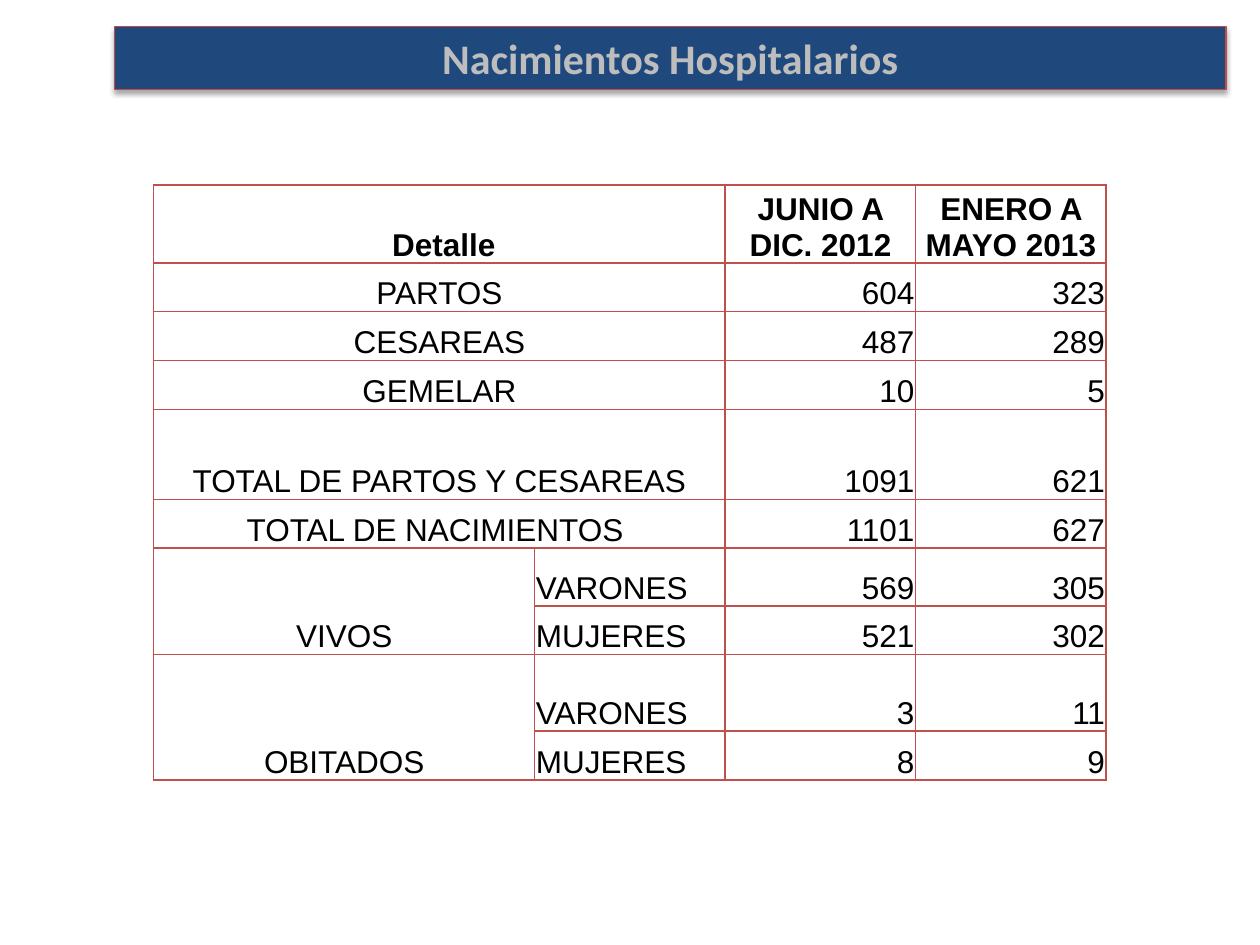
from dataclasses import dataclass

from lxml.etree import SubElement as Sub
from pptx import Presentation
from pptx.dml.color import RGBColor as Rgb
from pptx.enum.shapes import MSO_SHAPE as Shape
from pptx.enum.text import MSO_ANCHOR as Anchor, MSO_AUTO_SIZE as Auto, PP_ALIGN as Align
from pptx.oxml.ns import qn
from pptx.util import Inches, Pt


@dataclass(frozen=True)
class Theme:
    navy: str = "1F497D"
    red: str = "C0504D"
    edge: str = "BF4C48"
    grey: str = "BDBDBD"
    ink: str = "000000"
    head: str = "Calibri"
    body: str = "Arial"
    big: int = 24
    mid: int = 18


T = Theme()
WIDE, HIGH = 10, 7.5

# Column and row shares of the table
COLS = [2, 1, 1, 1]
ROWS = [62, 39, 39, 39, 72, 39, 46, 39, 61, 39]

# None marks a cell covered by a merge
DATA = [
    [" Detalle", None, "JUNIO A DIC. 2012", "ENERO A MAYO 2013"],
    ["PARTOS", None, 604, 323],
    ["CESAREAS", None, 487, 289],
    ["GEMELAR", None, 10, 5],
    ["TOTAL DE PARTOS Y CESAREAS", None, 1091, 621],
    ["TOTAL DE NACIMIENTOS ", None, 1101, 627],
    ["VIVOS", "VARONES", 569, 305],
    [None, "MUJERES", 521, 302],
    ["OBITADOS", "VARONES", 3, 11],
    [None, "MUJERES", 8, 9],
]


def style(para, font, size, color, bold, align):
    para.alignment = align
    for run in para.runs:
        run.font.name, run.font.size, run.font.bold = font, Pt(size), bold
        run.font.color.rgb = Rgb.from_string(color)


def shade(shape):
    # Soft shadow straight below the shape
    fx = Sub(shape._element.spPr, qn("a:effectLst"))
    out = Sub(fx, qn("a:outerShdw"), blurRad=str(Pt(3.1)), dist=str(Pt(1.8)),
              dir="5400000", rotWithShape="0")
    tint = Sub(out, qn("a:srgbClr"), val=T.ink)
    Sub(tint, qn("a:alpha"), val="35000")


def frame(cell):
    # Border lines come before the fill
    prop = cell._tc.get_or_add_tcPr()
    for side in "LRTB":
        line = Sub(prop, qn("a:ln" + side), w=str(Pt(1)))
        Sub(Sub(line, qn("a:solidFill")), qn("a:srgbClr"), val=T.red)
    cell.fill.background()


def banner(slide, box, text):
    bar = slide.shapes.add_shape(Shape.RECTANGLE, *map(Inches, box))
    bar.fill.solid()
    bar.fill.fore_color.rgb = Rgb.from_string(T.navy)
    bar.line.color.rgb = Rgb.from_string(T.edge)
    bar.line.width = Pt(0.75)
    shade(bar)
    bar.text_frame.text = text
    bar.text_frame.word_wrap = True
    bar.text_frame.auto_size = Auto.SHAPE_TO_FIT_TEXT
    style(bar.text_frame.paragraphs[0], T.head, T.big, T.grey, True, Align.CENTER)


def fill(cell, text, bold, align):
    cell.text_frame.text = str(text)
    style(cell.text_frame.paragraphs[0], T.body, T.mid, T.ink, bold, align)


def births(slide, box):
    grid = slide.shapes.add_table(len(ROWS), len(COLS), *map(Inches, box)).table
    grid.first_row = grid.horz_banding = False
    for col, part in zip(grid.columns, COLS):
        col.width = Inches(box[2] * part / sum(COLS))
    for row, part in zip(grid.rows, ROWS):
        row.height = Inches(box[3] * part / sum(ROWS))

    for r, line in enumerate(DATA):
        for c, text in enumerate(line):
            cell = grid.cell(r, c)
            cell.margin_left = cell.margin_right = cell.margin_top = Inches(0.01)
            cell.margin_bottom = 0
            cell.vertical_anchor = Anchor.BOTTOM
            frame(cell)
            if text is None:
                # Join to the label at the left or above
                start = grid.cell(r, 0) if c else grid.cell(r - 1, 0)
                start.merge(cell)
                continue
            if r == 0 or c == 0:
                align = Align.CENTER
            else:
                align = Align.LEFT if c == 1 else Align.RIGHT
            fill(cell, text, r == 0, align)


def main():
    deck = Presentation()
    deck.slide_width, deck.slide_height = Inches(WIDE), Inches(HIGH)
    slide = deck.slides.add_slide(deck.slide_layouts[6])
    births(slide, (1.22, 1.47, 7.56, 4.72))
    banner(slide, (0.91, 0.21, 8.82, 0.5), "Nacimientos Hospitalarios")
    deck.save("out.pptx")


if __name__ == "__main__":
    main()
